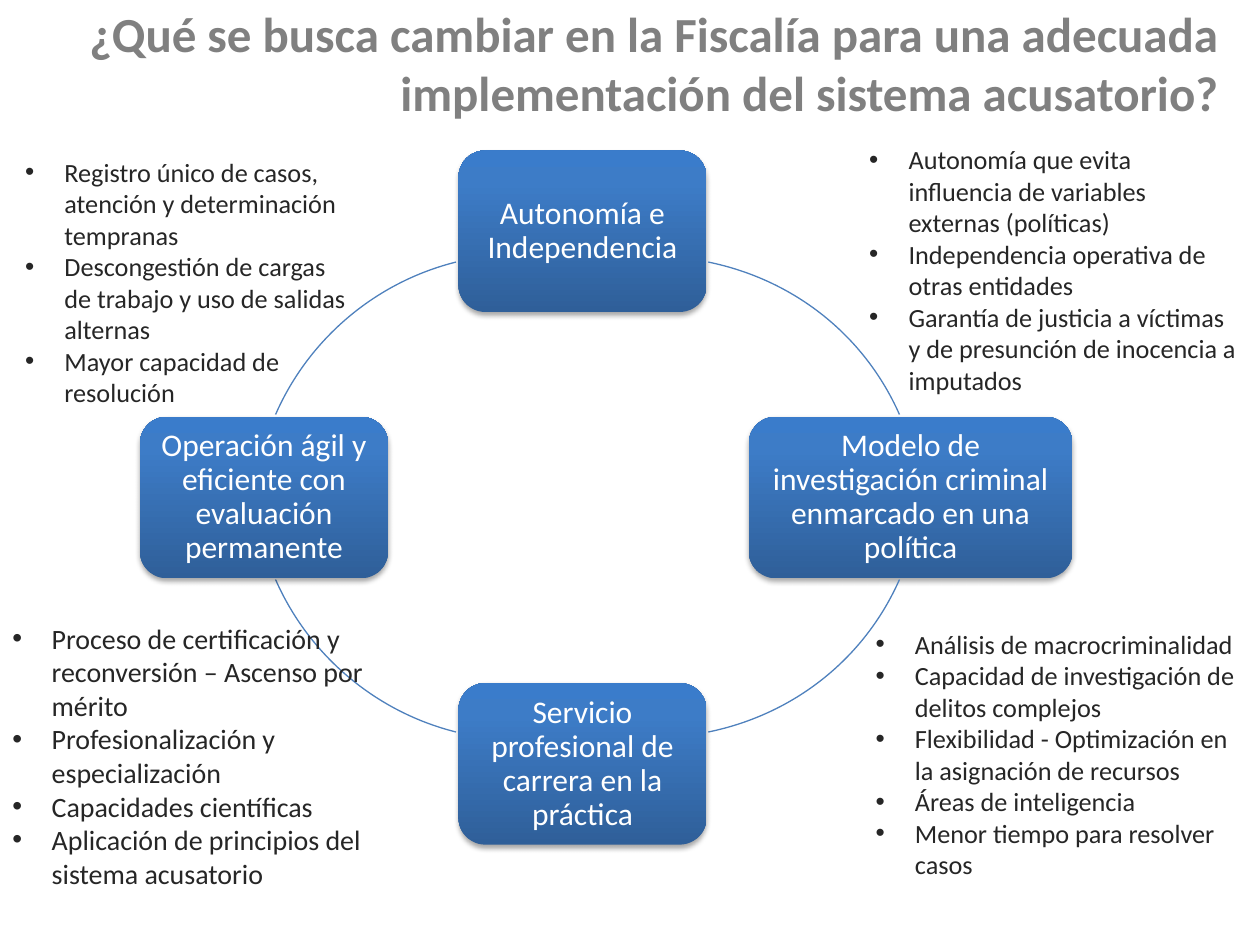
from typing import NamedTuple

from lxml import etree
from pptx import Presentation
from pptx.dml.color import RGBColor
from pptx.enum.shapes import MSO_SHAPE
from pptx.enum.text import MSO_ANCHOR, PP_ALIGN
from pptx.oxml.ns import qn
from pptx.util import Pt

ROUNDED = MSO_SHAPE.ROUNDED_RECTANGLE
TOP, MIDDLE = MSO_ANCHOR.TOP, MSO_ANCHOR.MIDDLE
LEFT, CENTER, RIGHT = PP_ALIGN.LEFT, PP_ALIGN.CENTER, PP_ALIGN.RIGHT

FONT = "Calibri"
RING_SIZE = 304.6
MIRROR_Y = 568.1
NODE_W, NODE_H = 141.8, 92.3
NODE_TOP, ROW_PITCH = 86, 152.2
INDENT = 22.5
GRADIENT = ((0, "2F5F99"), (80, "3D7CC7"), (100, "3A7CCB"))
MARGINS = ("margin_left", "margin_top", "margin_right", "margin_bottom")


class Node(NamedTuple):
    text: str
    left: float
    row: int
    width: float = NODE_W


class Arc(NamedTuple):
    left: float
    top: float
    points: list[tuple[float, float]]


class Notes(NamedTuple):
    left: float
    top: float
    width: float
    height: float
    size: float
    items: tuple[str, ...]


NODES = (
    Node("Autonomía e Independencia", 262, 0),
    Node("Modelo de investigación criminal enmarcado en una política", 427.9, 1, 185),
    Node("Servicio profesional de carrera en la práctica", 262, 2),
    Node("Operación ágil y eficiente con evaluación permanente", 80, 1),
)

NOTES = (
    Notes(7.2, 85.7, 200.9, 152.6, 15, (
        "Registro único de casos, atención y determinación tempranas",
        "Descongestión de cargas de trabajo y uso de salidas alternas",
        "Mayor capacidad de resolución",
    )),
    Notes(0, 351.4, 256.3, 162.7, 16, (
        "Proceso de certificación y reconversión – Ascenso por mérito",
        "Profesionalización y especialización",
        "Capacidades científicas",
        "Aplicación de principios del sistema acusatorio",
    )),
    Notes(493.2, 355.3, 226.8, 152.6, 15, (
        "Análisis de macrocriminalidad",
        "Capacidad de investigación de delitos complejos",
        "Flexibilidad - Optimización en la asignación de recursos",
        "Áreas de inteligencia",
        "Menor tiempo para resolver casos",
    )),
    Notes(489.6, 78.5, 226.8, 170.6, 15, (
        "Autonomía que evita influencia de variables externas (políticas)",
        "Independencia operativa de otras entidades",
        "Garantía de justicia a víctimas y de presunción de inocencia a imputados",
    )),
)

UPPER_RIGHT = [(404.8, 149.8), (453.6, 159.8), (493.9, 191.5), (514, 236.9)]
UPPER_LEFT = [(157.5, 236.9), (176.4, 193.7), (214.6, 161.3), (260.6, 149.8)]


def mirrored(points: list[tuple[float, float]]) -> list[tuple[float, float]]:
    return [(x, MIRROR_Y - y) for x, y in reversed(points)]


ARCS = (
    Arc(223.2, 146.9, UPPER_RIGHT),
    Arc(223.2, 117.4, mirrored(UPPER_RIGHT)),
    Arc(144.7, 118.8, mirrored(UPPER_LEFT)),
    Arc(144.7, 145.4, UPPER_LEFT),
)


def rgb(value: str) -> RGBColor:
    return RGBColor.from_string(value)


def apply(target, values: dict) -> None:
    for name, value in values.items():
        setattr(target, name, value)


def child(parent, tag: str, **attrs):
    return etree.SubElement(parent, qn(tag), {k: str(v) for k, v in attrs.items()})


def write(tf, texts, size: float, color: str, align, anchor, bold=False,
          spacing=1.0, bullets=False) -> None:
    apply(tf, {"word_wrap": True, "vertical_anchor": anchor})
    for i, text in enumerate(texts):
        p = tf.add_paragraph() if i else tf.paragraphs[0]
        apply(p, {"alignment": align, "line_spacing": spacing})
        if bullets:
            pPr = p._p.get_or_add_pPr()
            pPr.set("marL", str(Pt(INDENT)))
            pPr.set("indent", str(-Pt(INDENT)))
            child(pPr, "a:buFont", typeface="Arial")
            child(pPr, "a:buChar", char="•")
        r = p.add_run()
        r.text = text
        apply(r.font, {"name": FONT, "size": Pt(size), "bold": bold})
        r.font.color.rgb = rgb(color)


def draw_node(s, node: Node) -> None:
    top = NODE_TOP + node.row * ROW_PITCH
    sp = s.shapes.add_shape(ROUNDED, Pt(node.left), Pt(top), Pt(node.width), Pt(NODE_H))
    sp.fill.gradient()
    sp.fill.gradient_angle = 90
    sp.line.fill.background()
    sp.shadow.inherit = False
    spPr = sp._element.spPr
    stops = spPr.find(".//" + qn("a:gsLst"))
    for old in list(stops):
        stops.remove(old)
    for position, color in GRADIENT:
        child(child(stops, "a:gs", pos=position * 1000), "a:srgbClr", val=color)
    shadow = child(spPr.find(qn("a:effectLst")), "a:outerShdw", blurRad=Pt(3.1),
                   dist=Pt(1.8), dir=5400000, rotWithShape=0)
    child(child(shadow, "a:srgbClr", val="000000"), "a:alpha", val=35000)
    apply(sp.text_frame, {name: Pt(5) for name in MARGINS})
    write(sp.text_frame, [node.text], 18, "FFFFFF", CENTER, MIDDLE, spacing=0.9)


def draw_arc(s, arc: Arc) -> None:
    side = Pt(RING_SIZE)
    fb = s.shapes.build_freeform()
    fb.add_line_segments([(side, side)], close=False)
    sp = fb.convert_to_shape(Pt(arc.left), Pt(arc.top))
    outline = sp._element.spPr.find(".//" + qn("a:path"))
    for old in list(outline):
        outline.remove(old)
    start, *controls = [(Pt(x - arc.left), Pt(y - arc.top)) for x, y in arc.points]
    for tag, points in (("a:moveTo", [start]), ("a:cubicBezTo", controls)):
        step = child(outline, tag)
        for x, y in points:
            child(step, "a:pt", x=x, y=y)
    sp.fill.background()
    sp.shadow.inherit = False
    sp.line.width = Pt(0.75)
    sp.line.color.rgb = rgb("4F81BD")


def draw_notes(s, notes: Notes) -> None:
    tb = s.shapes.add_textbox(*map(Pt, notes[:4]))
    write(tb.text_frame, notes.items, notes.size, "262626", LEFT, TOP, bullets=True)


def main() -> None:
    prs = Presentation()
    apply(prs, {"slide_width": Pt(720), "slide_height": Pt(540)})
    s = prs.slides.add_slide(prs.slide_layouts[6])
    title = s.shapes.add_textbox(Pt(13.2), Pt(5.8), Pt(689.8), Pt(59.8))
    write(title.text_frame,
          ["¿Qué se busca cambiar en la Fiscalía para una adecuada "
           "implementación del sistema acusatorio?"],
          28, "808080", RIGHT, MIDDLE, bold=True)
    for node, arc in zip(NODES, ARCS):
        draw_node(s, node)
        draw_arc(s, arc)
    for notes in NOTES:
        draw_notes(s, notes)
    prs.save("out.pptx")


if __name__ == "__main__":
    main()
